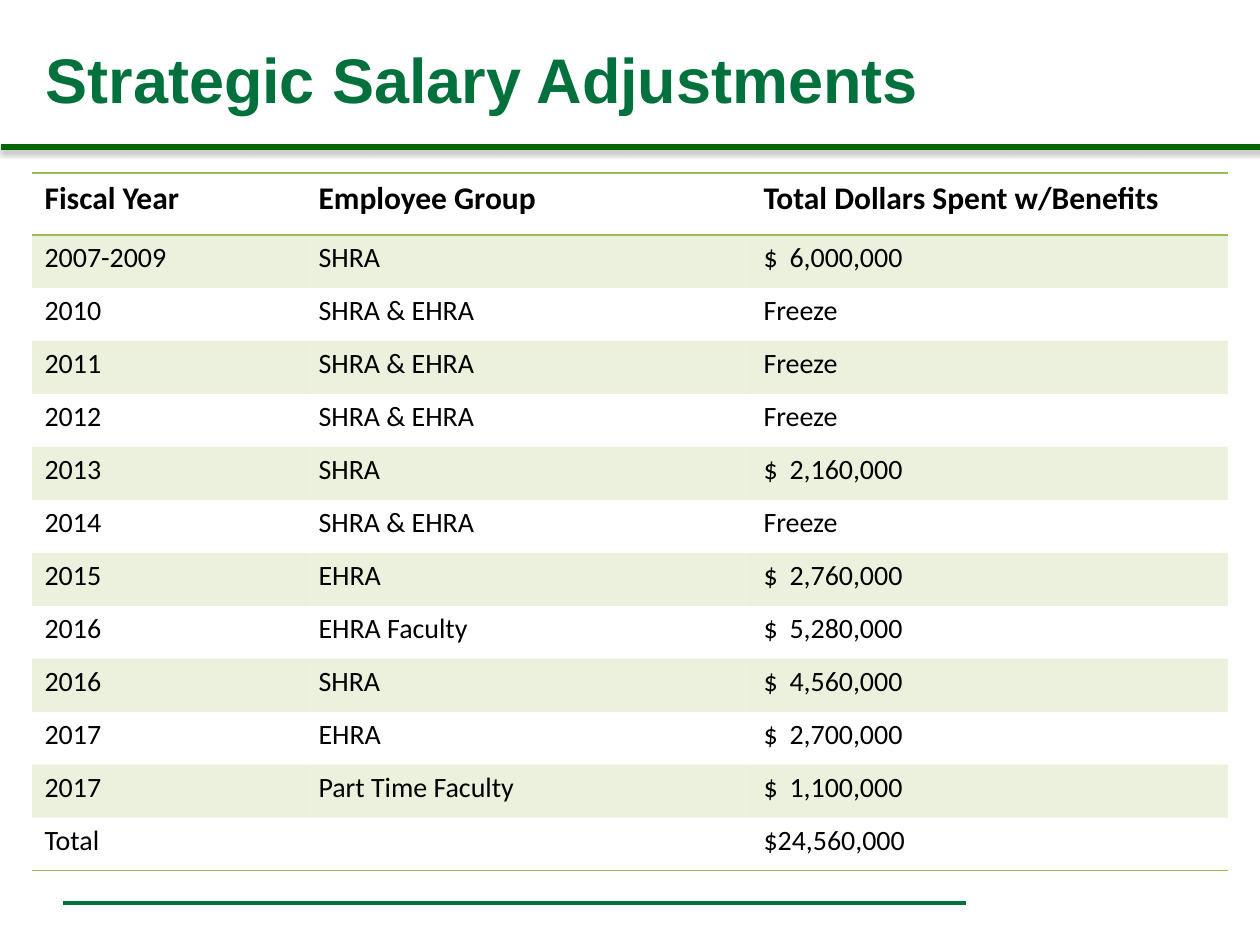
from dataclasses import dataclass
from typing import NamedTuple

from lxml.etree import SubElement
from pptx import Presentation
from pptx.dml.color import RGBColor
from pptx.enum.shapes import MSO_CONNECTOR
from pptx.enum.text import MSO_ANCHOR, PP_ALIGN
from pptx.oxml import parse_xml
from pptx.oxml.ns import nsdecls, qn
from pptx.util import Emu, Pt

PX = 914400 / 126
NO_STYLE_NO_GRID = "{2D5ABB26-0587-4C30-8999-92F81FD0307C}"


@dataclass(frozen=True)
class Theme:
    title_color: str = "00703C"
    rule_color: str = "006600"
    table_color: str = "9BBB59"
    text_color: str = "000000"
    title_font: str = "Arial"
    table_font: str = "Calibri"
    title_size: int = 36
    header_size: int = 18
    body_size: int = 16
    band_opacity: int = 20
    border_width: int = 1


class Rule(NamedTuple):
    left: int
    right: int
    y: int
    color: str
    width: float
    shadowed: bool


class Adjustment(NamedTuple):
    fiscal_year: str
    employee_group: str
    spent: str


THEME = Theme()
FOOTER_RULE = Rule(63, 966, 903, THEME.title_color, 2.5, False)
TITLE_RULE = Rule(1, 1261, 147, THEME.rule_color, 3, True)

TABLE_LEFT, TABLE_TOP = 32, 173
COLUMN_WIDTHS = (274, 445, 477)
HEADER_HEIGHT, ROW_HEIGHT = 62, 53
AMOUNT_TAB = 26

ROWS = [
    Adjustment("Fiscal Year", "Employee Group", "Total Dollars Spent w/Benefits"),
    Adjustment("2007-2009", "SHRA", "$\t6,000,000"),
    Adjustment("2010", "SHRA & EHRA", "Freeze"),
    Adjustment("2011", "SHRA & EHRA", "Freeze"),
    Adjustment("2012", "SHRA & EHRA", "Freeze"),
    Adjustment("2013", "SHRA", "$\t2,160,000"),
    Adjustment("2014", "SHRA & EHRA", "Freeze"),
    Adjustment("2015", "EHRA", "$\t2,760,000"),
    Adjustment("2016", "EHRA Faculty", "$\t5,280,000"),
    Adjustment("2016", "SHRA", "$\t4,560,000"),
    Adjustment("2017", "EHRA", "$\t2,700,000"),
    Adjustment("2017", "Part Time Faculty", "$\t1,100,000"),
    Adjustment("Total", "", "$24,560,000"),
]


def px(length: int) -> Emu:
    return Emu(round(length * PX))


def add_run(para, text: str, font: str, size: int, color: str, bold: bool) -> None:
    span = para.add_run()
    span.text = text
    span.font.name = font
    span.font.size = Pt(size)
    span.font.bold = bold
    span.font.color.rgb = RGBColor.from_string(color)


def add_rule(slide, rule: Rule) -> None:
    line = slide.shapes.add_connector(
        MSO_CONNECTOR.STRAIGHT, px(rule.left), px(rule.y), px(rule.right), px(rule.y))
    line.line.color.rgb = RGBColor.from_string(rule.color)
    line.line.width = Pt(rule.width)
    effects = SubElement(line._element.spPr, qn("a:effectLst"))
    if rule.shadowed:
        effects.append(parse_xml(
            f'<a:outerShdw {nsdecls("a")} blurRad="{Pt(3.1)}" dist="{Pt(1.8)}" '
            'dir="5400000" rotWithShape="0"><a:srgbClr val="000000">'
            '<a:alpha val="35000"/></a:srgbClr></a:outerShdw>'))


def fill_band(cell) -> None:
    cell.fill.solid()
    cell.fill.fore_color.rgb = RGBColor.from_string(THEME.table_color)
    color = cell._tc.tcPr.find(qn("a:solidFill")).find(qn("a:srgbClr"))
    SubElement(color, qn("a:alpha")).set("val", str(THEME.band_opacity * 1000))


def set_borders(cell, edges: str) -> None:
    """Draw the named edges (T, B), placing them ahead of the cell's fill."""
    for position, edge in enumerate(edges):
        cell._tc.get_or_add_tcPr().insert(position, parse_xml(
            f'<a:ln{edge} {nsdecls("a")} w="{Pt(THEME.border_width)}"><a:solidFill>'
            f'<a:srgbClr val="{THEME.table_color}"/></a:solidFill></a:ln{edge}>'))


def add_tab_stop(para, position: int) -> None:
    tabs = SubElement(para._p.get_or_add_pPr(), qn("a:tabLst"))
    stop = SubElement(tabs, qn("a:tab"))
    stop.set("pos", str(px(position)))
    stop.set("algn", "l")


def fill_cell(cell, text: str, row_index: int) -> None:
    is_header = row_index == 0
    if row_index % 2:
        fill_band(cell)
    else:
        cell.fill.background()
    if is_header:
        set_borders(cell, "TB")
    elif row_index == len(ROWS) - 1:
        set_borders(cell, "B")
    if text:
        para = cell.text_frame.paragraphs[0]
        if "\t" in text:
            add_tab_stop(para, AMOUNT_TAB)
        size = THEME.header_size if is_header else THEME.body_size
        add_run(para, text, THEME.table_font, size, THEME.text_color, is_header)


def add_adjustments_table(slide) -> None:
    heights = [HEADER_HEIGHT] + [ROW_HEIGHT] * (len(ROWS) - 1)
    table = slide.shapes.add_table(
        len(ROWS), len(COLUMN_WIDTHS), px(TABLE_LEFT), px(TABLE_TOP),
        px(sum(COLUMN_WIDTHS)), px(sum(heights))).table
    table._tbl.tblPr.find(qn("a:tableStyleId")).text = NO_STYLE_NO_GRID
    table.horz_banding = False
    for column, width in zip(table.columns, COLUMN_WIDTHS):
        column.width = px(width)
    for row_index, adjustment in enumerate(ROWS):
        table.rows[row_index].height = px(heights[row_index])
        for column_index, text in enumerate(adjustment):
            fill_cell(table.cell(row_index, column_index), text, row_index)


def set_title(slide, text: str) -> None:
    title = slide.shapes.title
    title.left, title.top, title.width, title.height = px(33), px(10), px(1225), px(136)
    title.text_frame.vertical_anchor = MSO_ANCHOR.MIDDLE
    para = title.text_frame.paragraphs[0]
    para.alignment = PP_ALIGN.LEFT
    add_run(para, text, THEME.title_font, THEME.title_size, THEME.title_color, True)


def main() -> None:
    deck = Presentation()
    deck.slide_width, deck.slide_height = px(1260), px(945)
    slide = deck.slides.add_slide(deck.slide_layouts[5])
    set_title(slide, "Strategic Salary Adjustments")
    add_rule(slide, FOOTER_RULE)
    add_adjustments_table(slide)
    add_rule(slide, TITLE_RULE)
    deck.save("out.pptx")


if __name__ == "__main__":
    main()
